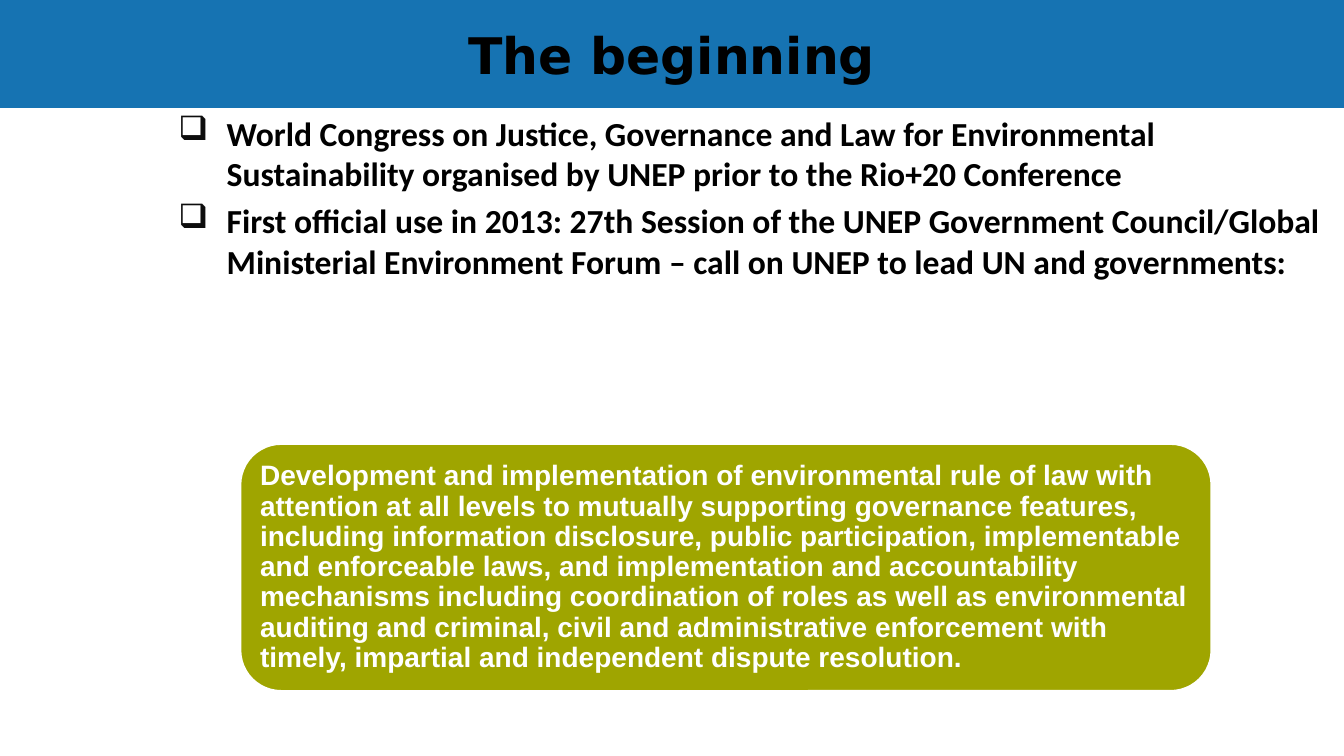
import dataclasses

import lxml.etree
import pptx
import pptx.dml.color
import pptx.enum.shapes
import pptx.enum.text
import pptx.oxml.ns
import pptx.util

Inches = pptx.util.Inches
Pt = pptx.util.Pt
Anchor = pptx.enum.text.MSO_ANCHOR
Align = pptx.enum.text.PP_ALIGN
Shape = pptx.enum.shapes.MSO_SHAPE

WIDTH, HEIGHT = 13.33, 7.5
BANNER_HEIGHT = 1.07

TITLE = "The beginning"
POINTS = [
    "World Congress on Justice, Governance and Law for Environmental "
    "Sustainability organised by UNEP prior to the Rio+20 Conference",
    "First official use in 2013: 27th Session of the UNEP Government "
    "Council/Global Ministerial Environment Forum – call on UNEP to lead "
    "UN and governments:",
]
MANDATE = (
    "Development and implementation of environmental rule of law with "
    "attention at all levels to mutually supporting governance features, "
    "including information disclosure, public participation, implementable "
    "and enforceable laws, and implementation and accountability mechanisms "
    "including coordination of roles as well as environmental auditing and "
    "criminal, civil and administrative enforcement with timely, impartial "
    "and independent dispute resolution."
)


@dataclasses.dataclass(frozen=True)
class Theme:
    banner: str = "1673B2"
    panel: str = "9FA500"
    light: str = "FFFFFF"
    dark: str = "000000"
    bullet: str = "0D0D0D"
    title_font: str = "DejaVu Sans"
    body_font: str = "Calibri"
    panel_font: str = "Arial"
    title_size: int = 36
    body_size: int = 24
    panel_size: int = 20


THEME = Theme()


def color(value):
    return pptx.dml.color.RGBColor.from_string(value)


def add_span(para, text, font, size, ink):
    span = para.add_run()
    span.text = text
    span.font.name = font
    span.font.size = Pt(size)
    span.font.bold = True
    span.font.color.rgb = color(ink)


def add_filled(page, kind, box, fill):
    shape = page.shapes.add_shape(kind, *map(Inches, box))
    shape.shadow.inherit = False
    shape.fill.solid()
    shape.fill.fore_color.rgb = color(fill)
    return shape


def set_frame(frame, anchor, inset_x, inset_y):
    frame.word_wrap = True
    frame.vertical_anchor = anchor
    frame.margin_left = frame.margin_right = Inches(inset_x)
    frame.margin_top = frame.margin_bottom = Inches(inset_y)


def add_bullet(para, symbol, ink, left, hanging):
    props = para._p.get_or_add_pPr()
    props.set("marL", str(Inches(left)))
    props.set("indent", str(-Inches(hanging)))
    qn = pptx.oxml.ns.qn
    tint = lxml.etree.SubElement(props, qn("a:buClr"))
    lxml.etree.SubElement(tint, qn("a:srgbClr")).set("val", ink)
    lxml.etree.SubElement(props, qn("a:buChar")).set("char", symbol)


# Title band across the top
def draw_banner(page, box):
    banner = add_filled(page, Shape.RECTANGLE, box, THEME.banner)
    banner.line.fill.background()
    set_frame(banner.text_frame, Anchor.MIDDLE, 0.1, 0.05)
    para = banner.text_frame.paragraphs[0]
    para.alignment = Align.CENTER
    add_span(para, TITLE, THEME.title_font, THEME.title_size, THEME.dark)


# Bulleted points below the band
def draw_points(page, box):
    frame = page.shapes.add_textbox(*map(Inches, box)).text_frame
    set_frame(frame, Anchor.TOP, 0.1, 0.05)
    for index, text in enumerate(POINTS):
        para = frame.add_paragraph() if index else frame.paragraphs[0]
        add_bullet(para, "❑", THEME.bullet, 0.52, 0.48)
        if index:
            para.space_before = Pt(0.2 * THEME.body_size)
        add_span(para, text, THEME.body_font, THEME.body_size, THEME.dark)


# Rounded panel with the quoted mandate
def draw_mandate(page, box):
    panel = add_filled(page, Shape.ROUNDED_RECTANGLE, box, THEME.panel)
    panel.line.color.rgb = color(THEME.light)
    panel.line.width = Pt(2)
    set_frame(panel.text_frame, Anchor.MIDDLE, 0.08, 0.08)
    para = panel.text_frame.paragraphs[0]
    para.alignment = Align.LEFT
    para.line_spacing = 0.9
    add_span(para, MANDATE, THEME.panel_font, THEME.panel_size, THEME.light)


def main():
    deck = pptx.Presentation()
    deck.slide_width, deck.slide_height = Inches(WIDTH), Inches(HEIGHT)
    page = deck.slides.add_slide(deck.slide_layouts[6])
    points_left = 1.63
    draw_banner(page, (0, 0, WIDTH, BANNER_HEIGHT))
    draw_points(page, (points_left, BANNER_HEIGHT,
                       WIDTH - points_left, HEIGHT - BANNER_HEIGHT))
    draw_mandate(page, (2.38, 4.4, 9.64, 2.46))
    deck.save("out.pptx")


if __name__ == "__main__":
    main()
